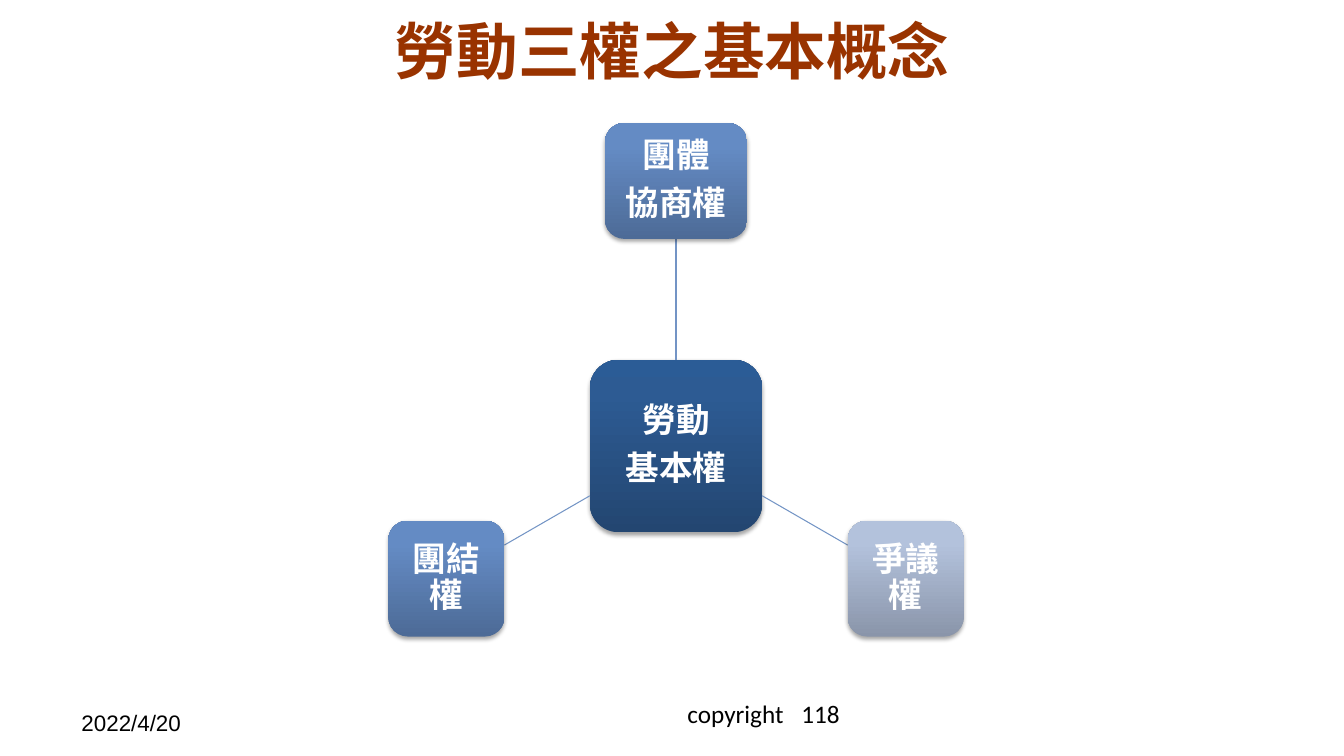
from math import cos, sin, radians

from lxml.etree import SubElement as Sub
from pptx import Presentation
from pptx.dml.color import RGBColor
from pptx.enum.shapes import MSO_CONNECTOR as Conn, MSO_SHAPE as Shape
from pptx.enum.text import MSO_ANCHOR as Anchor, PP_ALIGN as Align
from pptx.oxml import parse_xml
from pptx.oxml.ns import nsdecls, qn
from pptx.util import Inches, Pt

WIDE, HIGH = 13.33, 7.5
CJK = "Noto Sans CJK SC"
HUB = (6.705, 4.425)
REACH = 2.63
NAVY = ("234671", "2D5B93", "2B5C96")
BLUE = ("4D6B97", "648BC4", "638BC7")
PALE = ("8A95AA", "B3C2DC", "B4C3DE")
STOPS = (0, 80, 100)
LINK = "7394C5"

# angle in degrees (clockwise from right), width, height, tones, lines
RIGHTS = [
    (-90, 1.41, 1.15, BLUE, ["團體", "協商權"]),
    (30, 1.15, 1.15, PALE, ["爭議權"]),
    (150, 1.15, 1.15, BLUE, ["團結權"]),
]


def color(code):
    return RGBColor.from_string(code)


def write(shape, lines, font=CJK, size=24, tone="000000", bold=False,
          align=Align.LEFT, anchor=Anchor.MIDDLE, inset=None,
          lead=None, after=None, tab=None):
    frame = shape.text_frame
    frame.word_wrap = True
    frame.vertical_anchor = anchor
    if inset is not None:
        frame.margin_left = frame.margin_right = Inches(inset)
        frame.margin_top = frame.margin_bottom = Inches(inset)
    for i, line in enumerate(lines):
        para = frame.add_paragraph() if i else frame.paragraphs[0]
        para.alignment = align
        if lead:
            para.line_spacing = lead
        if after:
            para.space_after = Pt(after)
        if tab:
            tabs = Sub(para._p.get_or_add_pPr(), qn("a:tabLst"))
            Sub(tabs, qn("a:tab"), pos=str(Inches(tab)), algn="l")
        run = para.add_run()
        run.text = line
        run.font.name = font
        run.font.size = Pt(size)
        run.font.bold = bold
        run.font.color.rgb = color(tone)
        Sub(run._r.get_or_add_rPr(), qn("a:ea"), typeface=font)


def shade(shape, tones):
    """Fill from the bottom up and add a soft shadow below."""
    stops = "".join(
        f'<a:gs pos="{pos * 1000}"><a:srgbClr val="{tone}"/></a:gs>'
        for pos, tone in zip(STOPS, tones))
    shape.fill.background()
    props = shape._element.spPr
    props.replace(props.find(qn("a:noFill")), parse_xml(
        f'<a:gradFill {nsdecls("a")} rotWithShape="1"><a:gsLst>{stops}'
        '</a:gsLst><a:lin ang="16200000" scaled="0"/></a:gradFill>'))
    shape.line.fill.background()
    shape.shadow.inherit = False
    props.find(qn("a:effectLst")).append(parse_xml(
        f'<a:outerShdw {nsdecls("a")} blurRad="{Pt(3.1)}" dist="{Pt(1.8)}"'
        ' dir="5400000" rotWithShape="0"><a:srgbClr val="000000">'
        '<a:alpha val="35000"/></a:srgbClr></a:outerShdw>'))


def node(slide, mid, wide, high, tones, lines):
    box = slide.shapes.add_shape(
        Shape.ROUNDED_RECTANGLE, Inches(mid[0] - wide / 2),
        Inches(mid[1] - high / 2), Inches(wide), Inches(high))
    shade(box, tones)
    write(box, lines, tone="FFFFFF", bold=True, align=Align.CENTER,
          inset=0.07, lead=0.9, after=8.4)


def polar(angle, dist):
    """Point at a distance from the hub."""
    turn = radians(angle)
    return HUB[0] + dist * cos(turn), HUB[1] + dist * sin(turn)


def rim(angle, wide, high):
    """Distance from the middle of a box to its edge."""
    across, down = abs(cos(radians(angle))), abs(sin(radians(angle)))
    return 1 / max(2 * across / wide, 2 * down / high)


def link(slide, start, end):
    line = slide.shapes.add_connector(
        Conn.STRAIGHT, *(Inches(v) for v in (*start, *end)))
    line.line.color.rgb = color(LINK)
    line.line.width = Pt(0.75)
    Sub(line._element.spPr, qn("a:effectLst"))


def label(slide, left, wide, text, **form):
    box = slide.shapes.add_textbox(
        Inches(left), Inches(6.88), Inches(wide), Inches(0.57))
    write(box, [text], **form)


def main():
    deck = Presentation()
    deck.slide_width, deck.slide_height = Inches(WIDE), Inches(HIGH)
    slide = deck.slides.add_slide(deck.slide_layouts[5])

    title = slide.shapes.title
    title.left, title.top = Inches(0.37), Inches(0.08)
    title.width, title.height = Inches(12.6), Inches(0.83)
    write(title, ["勞動三權之基本概念"], size=44, tone="993300", bold=True,
          align=Align.CENTER)

    side = 1.71
    node(slide, HUB, side, side, NAVY, ["勞動", "基本權"])
    for angle, wide, high, tones, lines in RIGHTS:
        link(slide, polar(angle, rim(angle, side, side)),
             polar(angle, REACH - rim(angle, wide, high)))
        node(slide, polar(angle, REACH), wide, high, tones, lines)

    label(slide, 0.71, 1.79, "2022/4/20", font="Arial", size=16)
    label(slide, 6.72, 1.84, "copyright\t118", font="Calibri", size=18,
          anchor=Anchor.TOP, tab=1.13)
    deck.save("out.pptx")


if __name__ == "__main__":
    main()
